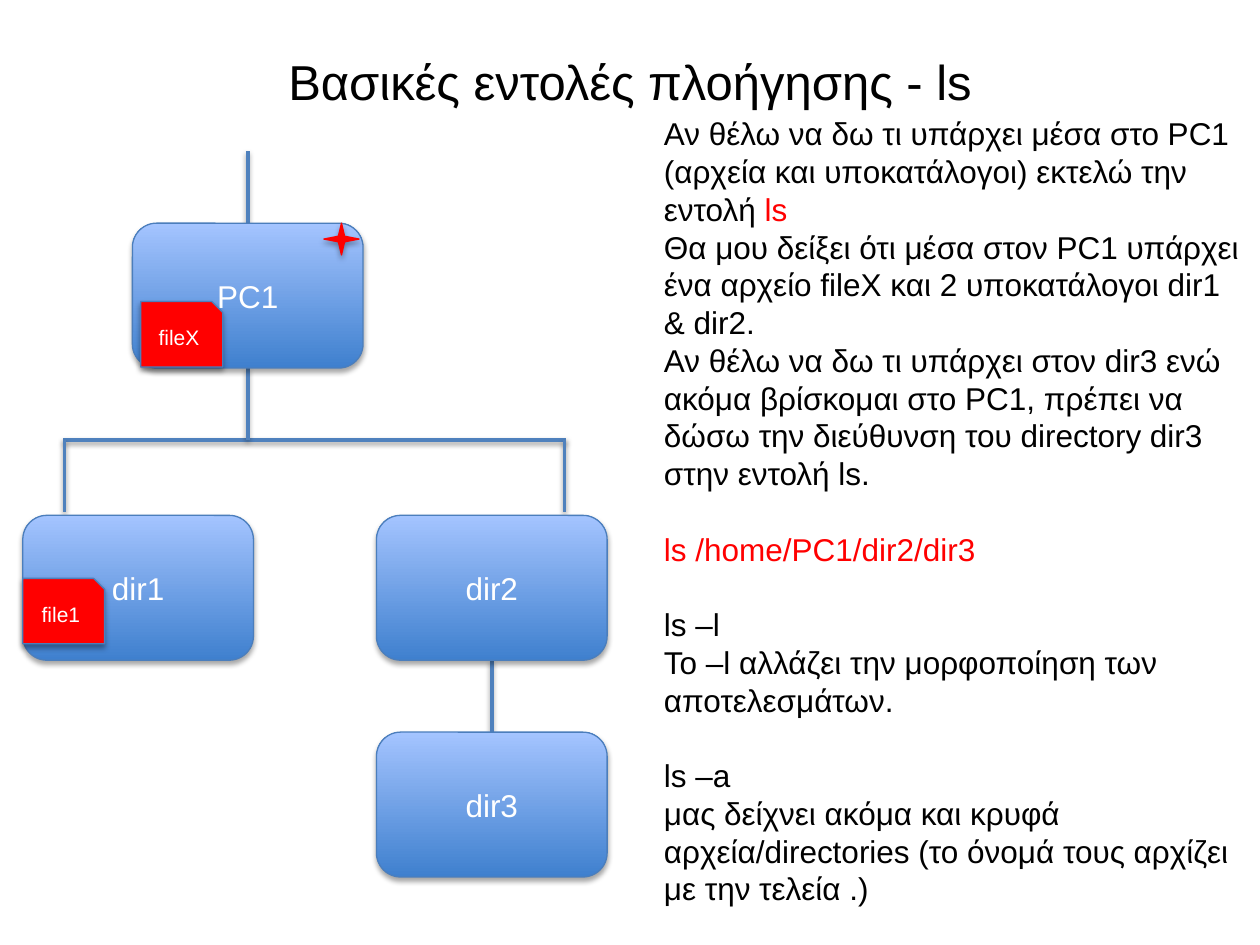
from dataclasses import dataclass

from lxml.etree import SubElement
from pptx import Presentation
from pptx.dml.color import RGBColor
from pptx.enum.shapes import MSO_CONNECTOR, MSO_SHAPE
from pptx.enum.text import MSO_ANCHOR, MSO_AUTO_SIZE, PP_ALIGN
from pptx.oxml.ns import qn
from pptx.util import Cm, Pt


@dataclass(frozen=True)
class Theme:
    font: str = "Arial"
    title_size: float = 28
    text_size: float = 18
    file_size: float = 12
    line_pitch: float = 21.57
    black: RGBColor = RGBColor(0, 0, 0)
    white: RGBColor = RGBColor(255, 255, 255)
    red: RGBColor = RGBColor(255, 0, 0)
    link: RGBColor = RGBColor(0x4F, 0x81, 0xBD)
    outline: RGBColor = RGBColor(0x4B, 0x7E, 0xBC)
    folder_bottom: RGBColor = RGBColor(0x3F, 0x80, 0xCE)
    folder_top: RGBColor = RGBColor(0xA4, 0xC4, 0xFF)


@dataclass(frozen=True)
class Node:
    label: str
    left: float
    top: float


@dataclass(frozen=True)
class Link:
    x1: float
    y1: float
    x2: float
    y2: float


@dataclass(frozen=True)
class Passage:
    text: str
    command: str = ""
    gap: bool = False


THEME = Theme()
FOLDER_WIDTH, FOLDER_HEIGHT = 4.65, 2.92
FILE_WIDTH, FILE_HEIGHT = 1.65, 1.32
LEVEL_GAP = 1.45

PC1 = Node("PC1", 2.67, 4.5)
BAR_Y = PC1.top + FOLDER_HEIGHT + LEVEL_GAP
DIR1 = Node("dir1", 0.46, 10.39)
DIR2 = Node("dir2", 7.59, DIR1.top)
DIR3 = Node("dir3", DIR2.left, DIR2.top + FOLDER_HEIGHT + LEVEL_GAP)
FOLDERS = [PC1, DIR1, DIR2, DIR3]
FILES = [Node("file1", DIR1.left, 11.66), Node("fileΧ", 2.84, 6.08)]

TRUNK_X = PC1.left + FOLDER_WIDTH / 2
BRANCH_X = DIR2.left + FOLDER_WIDTH / 2
LEFT_X, RIGHT_X = 1.3, 11.38
LINKS = [
    Link(LEFT_X - 0.03, BAR_Y, RIGHT_X + 0.03, BAR_Y),
    Link(TRUNK_X, PC1.top - LEVEL_GAP, TRUNK_X, PC1.top),
    Link(TRUNK_X, BAR_Y - LEVEL_GAP, TRUNK_X, BAR_Y),
    Link(LEFT_X, BAR_Y, LEFT_X, BAR_Y + LEVEL_GAP),
    Link(RIGHT_X, BAR_Y, RIGHT_X, BAR_Y + LEVEL_GAP),
    Link(BRANCH_X, DIR3.top - LEVEL_GAP, BRANCH_X, DIR3.top),
]

PASSAGES = [
    Passage("Αν θέλω να δω τι υπάρχει μέσα στο PC1 (αρχεία και υποκατάλογοι) εκτελώ την εντολή ", "ls"),
    Passage("Θα μου δείξει ότι μέσα στον PC1 υπάρχει ένα αρχείο fileX και 2 υποκατάλογοι dir1 & dir2."),
    Passage("Αν θέλω να δω τι υπάρχει στον dir3 ενώ ακόμα βρίσκομαι στο PC1, πρέπει να δώσω "
            "την διεύθυνση του directory dir3 στην εντολή ls."),
    Passage("", "ls /home/PC1/dir2/dir3", gap=True),
    Passage("ls –l", gap=True),
    Passage("To –l αλλάζει την μορφοποίηση των αποτελεσμάτων."),
    Passage("ls –a", gap=True),
    Passage("μας δείχνει ακόμα και κρυφά αρχεία/directories (το όνομά τους αρχίζει με την τελεία .)"),
]


def place(shape, left: float, top: float, width: float, height: float) -> None:
    shape.left, shape.top = Cm(left), Cm(top)
    shape.width, shape.height = Cm(width), Cm(height)


def style_font(font, size: float, color: RGBColor) -> None:
    font.name, font.size = THEME.font, Pt(size)
    font.color.rgb = color


def add_shadow(shape, opacity: int, distance: float) -> None:
    properties = shape._element.spPr
    for old in properties.findall(qn("a:effectLst")):
        properties.remove(old)
    effects = SubElement(properties, qn("a:effectLst"))
    shadow = SubElement(effects, qn("a:outerShdw"), blurRad=str(Pt(3.1)),
                        dist=str(Pt(distance)), dir="5400000", rotWithShape="0")
    color = SubElement(shadow, qn("a:srgbClr"), val="000000")
    SubElement(color, qn("a:alpha"), val=str(opacity * 1000))


def add_link(page, link: Link) -> None:
    line = page.shapes.add_connector(MSO_CONNECTOR.STRAIGHT, Cm(link.x1), Cm(link.y1),
                                     Cm(link.x2), Cm(link.y2))
    line.line.color.rgb = THEME.link
    line.line.width = Pt(2)
    add_shadow(line, 38, 1.6)


def add_outlined(page, kind, left: float, top: float, width: float, height: float, outline: RGBColor):
    shape = page.shapes.add_shape(kind, Cm(left), Cm(top), Cm(width), Cm(height))
    shape.fill.solid()
    shape.fill.fore_color.rgb = THEME.red
    shape.line.color.rgb = outline
    shape.line.width = Pt(0.75)
    add_shadow(shape, 35, 1.8)
    return shape


def add_label(shape, label: str, size: float) -> None:
    shape.text_frame.vertical_anchor = MSO_ANCHOR.MIDDLE
    para = shape.text_frame.paragraphs[0]
    para.text = label
    para.alignment = PP_ALIGN.CENTER
    style_font(para.font, size, THEME.white)


def add_folder(page, node: Node) -> None:
    box = add_outlined(page, MSO_SHAPE.ROUNDED_RECTANGLE, node.left, node.top,
                       FOLDER_WIDTH, FOLDER_HEIGHT, THEME.outline)
    box.fill.gradient()
    box.fill.gradient_angle = 90
    for stop, color in zip(box.fill.gradient_stops, (THEME.folder_bottom, THEME.folder_top)):
        stop.color.rgb = color
    add_label(box, node.label, THEME.text_size)


def add_file(page, node: Node) -> None:
    box = add_outlined(page, MSO_SHAPE.SNIP_1_RECTANGLE, node.left, node.top,
                       FILE_WIDTH, FILE_HEIGHT, THEME.outline)
    add_label(box, node.label, THEME.file_size)


def fill_title(title) -> None:
    place(title, 1.27, 0.76, 22.86, 1.73)
    title.text_frame.vertical_anchor = MSO_ANCHOR.MIDDLE
    para = title.text_frame.paragraphs[0]
    para.text = "Βασικές εντολές πλοήγησης - ls"
    para.alignment = PP_ALIGN.CENTER
    style_font(para.font, THEME.title_size, THEME.black)


def fill_body(body) -> None:
    place(body, 13.13, 2.18, 12.27, 16.41)
    frame = body.text_frame
    frame.word_wrap = True
    frame.auto_size = MSO_AUTO_SIZE.NONE
    for index, passage in enumerate(PASSAGES):
        para = frame.add_paragraph() if index else frame.paragraphs[0]
        para.line_spacing = Pt(THEME.line_pitch)
        para.space_before = Pt(THEME.line_pitch if passage.gap else 0)
        properties = para._p.get_or_add_pPr()
        properties.set("marL", "0")
        properties.set("indent", "0")
        SubElement(properties, qn("a:buNone"))
        for text, color in ((passage.text, THEME.black), (passage.command, THEME.red)):
            if text:
                span = para.add_run()
                span.text = text
                style_font(span.font, THEME.text_size, color)


def main() -> None:
    deck = Presentation()
    deck.slide_width, deck.slide_height = Cm(25.4), Cm(19.05)
    page = deck.slides.add_slide(deck.slide_layouts[1])
    fill_title(page.shapes.title)
    fill_body(page.placeholders[1])
    for link in LINKS:
        add_link(page, link)
    for folder in FOLDERS:
        add_folder(page, folder)
    for file in FILES:
        add_file(page, file)
    add_outlined(page, MSO_SHAPE.STAR_4_POINT, 6.53, 4.5, 0.71, 0.64, THEME.red)
    deck.save("out.pptx")


if __name__ == "__main__":
    main()
